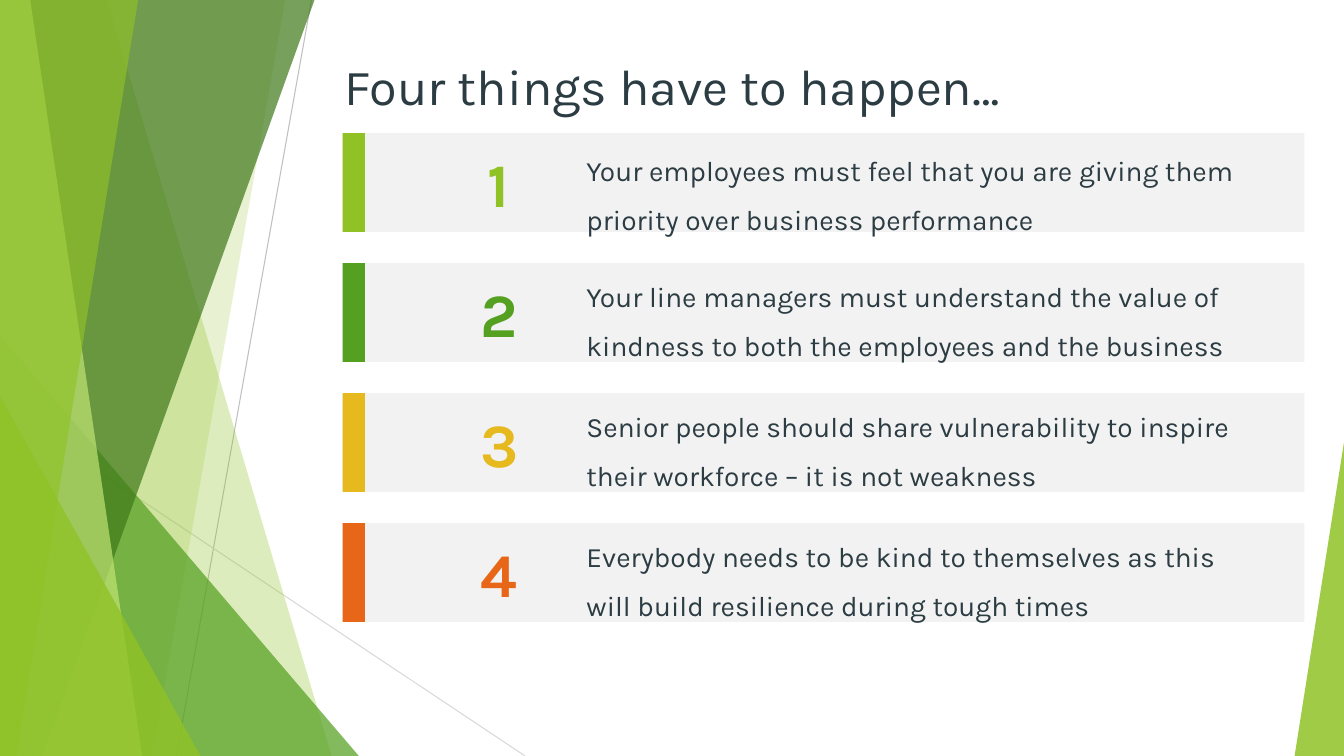
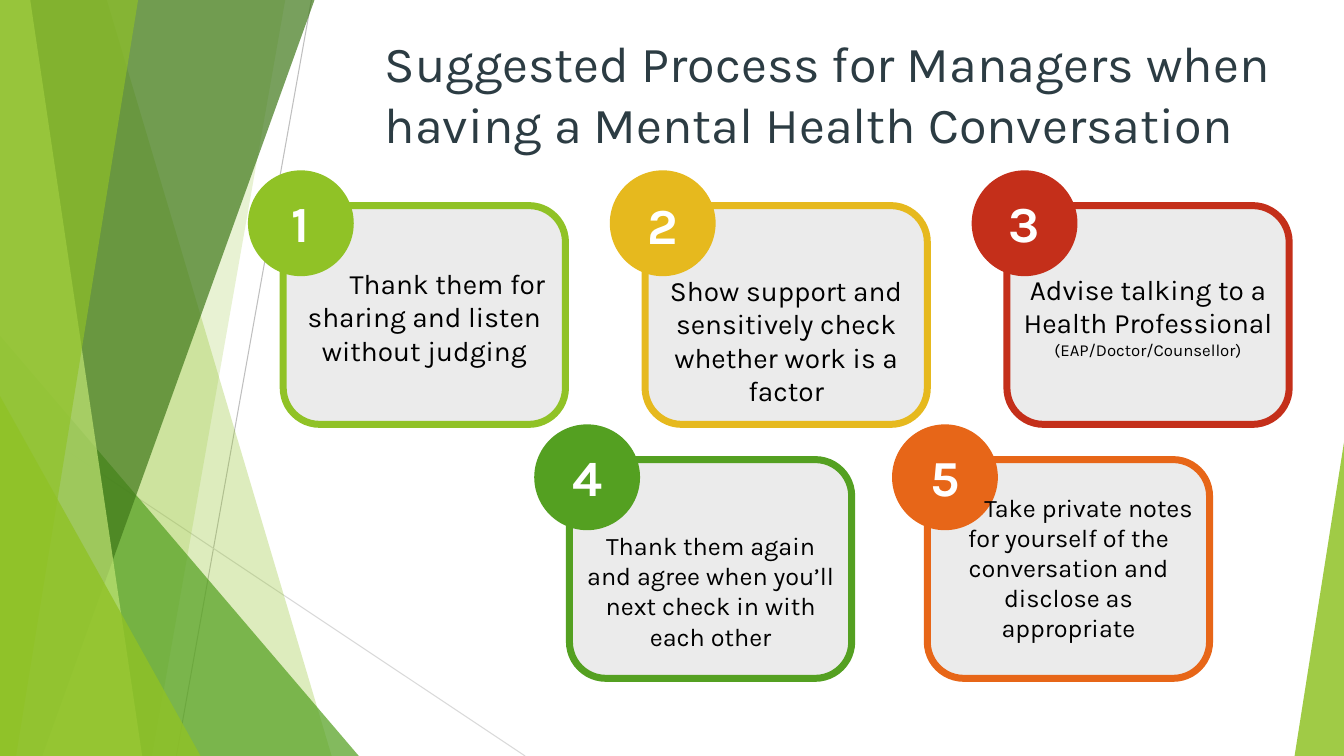
from lxml.etree import SubElement
from pptx import Presentation
from pptx.dml.color import RGBColor
from pptx.enum.shapes import MSO_CONNECTOR as Connector, MSO_SHAPE as Preset
from pptx.enum.text import MSO_ANCHOR as Anchor, PP_ALIGN as Align
from pptx.oxml.ns import qn
from pptx.util import Inches, Pt

# Palette
LIME, GREEN, GOLD, ORANGE, RED = "90C226", "54A021", "E6B91E", "E76618", "C42F1A"
FOREST, PALE_LIME = "3F7819", "C0E474"
INK, BLACK, WHITE = "2C3C43", "000000", "FFFFFF"
ROW_GREY, CARD_GREY = "F2F2F2", "EBEBEB"


def rgb(value):
    return RGBColor.from_string(value)


class Deck:
    """House style and current slide; lengths are grid columns and rows."""
    FONT = "Karla"
    COLUMNS, ROWS = 40, 30

    def __init__(self):
        self.show = Presentation()
        self.show.slide_width, self.show.slide_height = Inches(13.33), Inches(7.5)
        self.slide = None

    def x(self, columns):
        return round(self.show.slide_width * columns / self.COLUMNS)

    def y(self, rows):
        return round(self.show.slide_height * rows / self.ROWS)

    def area(self, left, top, width, height):
        return self.x(left), self.y(top), self.x(width), self.y(height)

    # Basic elements
    def paint(self, shape, fill, opacity=100, outline=None, weight=5):
        shape.shadow.inherit = False
        shape.fill.solid()
        shape.fill.fore_color.rgb = rgb(fill)
        if opacity < 100:
            colour = shape.fill._xPr.find(qn("a:solidFill"))[0]
            SubElement(colour, qn("a:alpha")).set("val", str(opacity * 1000))
        if outline:
            shape.line.color.rgb = rgb(outline)
            shape.line.width = Pt(weight)
        else:
            shape.line.fill.background()

    def block(self, preset, area, fill, **look):
        shape = self.slide.shapes.add_shape(preset, *self.area(*area))
        self.paint(shape, fill, **look)
        return shape

    def wedge(self, area, apex, fill, opacity):
        wedge = self.block(Preset.ISOSCELES_TRIANGLE, area, fill, opacity=opacity)
        wedge.adjustments[0] = apex

    def band(self, top_edge, bottom_edge, fill, opacity):
        """Full-height facet from the left side to a slanted edge."""
        outline = self.slide.shapes.build_freeform(0, 0)
        corners = [(top_edge, 0), (bottom_edge, self.ROWS), (0, self.ROWS)]
        outline.add_line_segments([(self.x(c), self.y(r)) for c, r in corners])
        self.paint(outline.convert_to_shape(), fill, opacity)

    def hairline(self, start, end, colour):
        line = self.slide.shapes.add_connector(
            Connector.STRAIGHT, self.x(start[0]), self.y(start[1]),
            self.x(end[0]), self.y(end[1]))
        line.line.color.rgb = rgb(colour)
        line.line.width = Pt(0.75)
        SubElement(line._element.spPr, qn("a:effectLst"))

    def text(self, area, lines, colour=INK, bold=False, align=Align.LEFT,
             anchor=Anchor.TOP, wrap=True, leading=None, indent=0):
        """Each line is a (wording, size) pair and becomes a paragraph."""
        frame = self.slide.shapes.add_textbox(*self.area(*area)).text_frame
        frame.word_wrap, frame.vertical_anchor = wrap, anchor
        for number, (wording, size) in enumerate(lines):
            paragraph = frame.add_paragraph() if number else frame.paragraphs[0]
            paragraph.alignment = align
            if leading:
                paragraph.line_spacing = Pt(leading)
            if indent and not number:
                paragraph._p.get_or_add_pPr().set("indent", str(self.x(indent)))
            run = paragraph.add_run()
            run.text = wording
            run.font.name, run.font.size, run.font.bold = self.FONT, Pt(size), bold
            run.font.color.rgb = rgb(colour)

    # Shared slide frame
    def backdrop(self):
        self.hairline((9.27, 0), (5.25, 30), "BFBFBF")
        self.hairline((0, 16.12), (15.63, 30), "D9D9D9")
        self.band(3.18, 9.87, LIME, 30)
        self.band(8.49, 4.53, LIME, 20)
        self.wedge((0, 13.32, 10.68, 16.68), 0, GREEN, 72)
        self.band(9.36, 1.26, FOREST, 70)
        self.band(0.9, 4.23, PALE_LIME, 70)
        self.band(4.11, 0.48, LIME, 65)
        self.wedge((0, 15.72, 5.97, 14.28), 0, LIME, 80)
        self.wedge((38.53, 17.56, 1.47, 12.44), 1, LIME, 85)

    def start(self, title, area):
        self.slide = self.show.slides.add_slide(self.show.slide_layouts[6])
        self.backdrop()
        self.text(area, [(title, 36)])

    # Content elements
    def requirement(self, number, top, colour, wording, lift):
        self.block(Preset.RECTANGLE, (10.2, top, 28.62, 3.92), ROW_GREY)
        self.block(Preset.RECTANGLE, (10.2, top, 0.66, 3.92), colour)
        self.text((14.01, top + 0.28, 1.68, 3.36), [(str(number), 44)], colour,
                  bold=True, align=Align.CENTER, anchor=Anchor.MIDDLE, wrap=False)
        self.text((17.16, top - lift, 20.79, 4.08), [(wording, 20)], leading=35)

    def step(self, number, left, top, colour, lines, drop, height, indent=0, nudge=0):
        self.block(Preset.ROUNDED_RECTANGLE, (left, top, 8.4, 8.68), CARD_GREY,
                   outline=colour)
        self.block(Preset.OVAL, (left - 1.05, top - 1.4, 3.15, 4.2), colour)
        self.text((left - 0.69, top - 0.72 + nudge, 2.43, 2.84), [(str(number), 36)],
                  WHITE, bold=True, align=Align.CENTER)
        self.text((left + 0.09, top + drop, 8.22, height), lines, BLACK,
                  align=Align.CENTER, indent=indent)


def four_things(deck):
    deck.start("Four things have to happen…", (9.96, 2, 20.25, 6.12))
    requirements = [
        (LIME, "Your employees must feel that you are giving them priority "
               "over business performance"),
        (GREEN, "Your line managers must understand the value of kindness to "
                "both the employees and the business"),
        (GOLD, "Senior people should share vulnerability to inspire their "
               "workforce – it is not weakness"),
        (ORANGE, "Everybody needs to be kind to themselves as this will build "
                 "resilience during tough times"),
    ]
    for index, (colour, wording) in enumerate(requirements):
        deck.requirement(index + 1, 5.28 + 5.16 * index, colour, wording,
                         lift=0.16 if index else 0)


def manager_process(deck):
    deck.start("Suggested Process for Managers when having a Mental Health "
               "Conversation", (11.16, 1.08, 28.2, 5.76))
    # Colour, wording, then placement of the wording inside the card
    upper = [
        (LIME, [("Thank them for sharing and listen without judging", 20)],
         dict(drop=2.2, height=4.44, indent=1.38)),
        (GOLD, [("Show support and sensitively check whether work is a factor", 20)],
         dict(drop=2.48, height=5.8, nudge=0.08)),
        (RED, [("Advise talking to a Health Professional", 20),
               ("(EAP/Doctor/Counsellor)", 12)],
         dict(drop=2.44, height=3.92)),
    ]
    lower = [
        (GREEN, [("Thank them again and agree when you’ll next check in with "
                  "each other", 18)],
         dict(drop=2.6, height=5.24)),
        (ORANGE, [("Take private notes for yourself of the conversation and "
                   "disclose as appropriate", 18)],
         dict(drop=1.08, height=6.48, indent=1.2)),
    ]
    number = 0
    for left, pitch, top, steps in [(8.43, 10.77, 8.16, upper),
                                    (16.95, 10.65, 18.24, lower)]:
        for column, (colour, lines, placing) in enumerate(steps):
            number += 1
            deck.step(number, left + pitch * column, top, colour, lines, **placing)


def main():
    deck = Deck()
    four_things(deck)
    manager_process(deck)
    deck.show.save("out.pptx")


if __name__ == "__main__":
    main()
